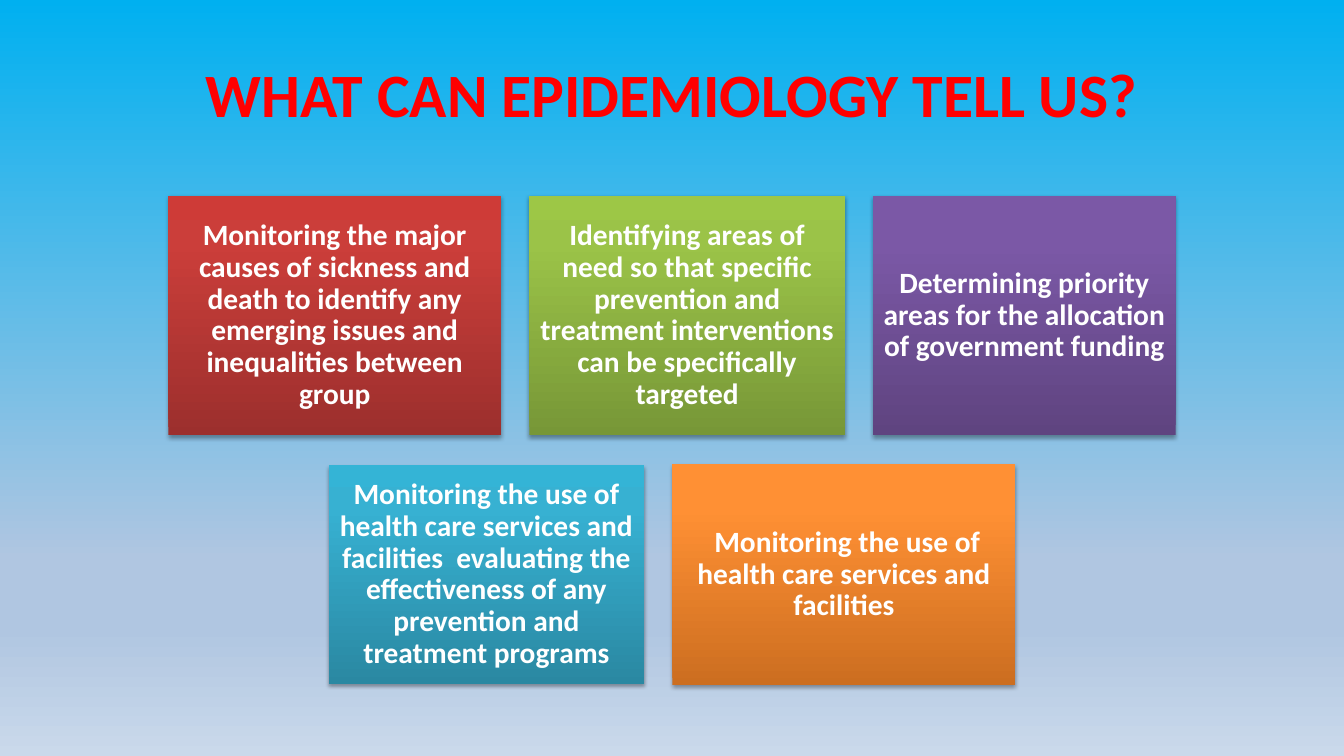
from lxml.etree import SubElement
from pptx import Presentation
from pptx.dml.color import RGBColor
from pptx.enum.shapes import MSO_SHAPE as SHAPE
from pptx.enum.text import MSO_ANCHOR as ANCHOR, PP_ALIGN as ALIGN
from pptx.oxml.ns import qn
from pptx.util import Emu, Inches, Pt

FONT = "Calibri"
BLACK = RGBColor(0x00, 0x00, 0x00)
WHITE = RGBColor(0xFF, 0xFF, 0xFF)
RED = RGBColor(0xFF, 0x00, 0x00)
SKY = RGBColor(0x00, 0xB0, 0xF0)
HAZE = RGBColor(0xB0, 0xC6, 0xE1)
MIST = RGBColor(0xCA, 0xD9, 0xEB)

# Tile shades, from bottom to top
SHADE_STOPS = (0, 80, 100)
CRIMSON = (RGBColor(0x9C, 0x2F, 0x2D), RGBColor(0xCB, 0x3E, 0x3A), RGBColor(0xCE, 0x3B, 0x37))
GREEN = (RGBColor(0x77, 0x97, 0x37), RGBColor(0x9B, 0xC3, 0x48), RGBColor(0x9D, 0xC7, 0x46))
PURPLE = (RGBColor(0x5F, 0x44, 0x80), RGBColor(0x7B, 0x58, 0xA6), RGBColor(0x7C, 0x57, 0xA8))
TEAL = (RGBColor(0x2A, 0x88, 0xA2), RGBColor(0x37, 0xB1, 0xD2), RGBColor(0x34, 0xB4, 0xD6))
ORANGE = (RGBColor(0xCC, 0x6E, 0x20), RGBColor(0xFF, 0x90, 0x34), RGBColor(0xFF, 0x91, 0x36))

# Rows of tiles: vertical centre, then (width, height, shades, text)
GAP = Inches(0.28)
ROWS = [
    (3.13, [
        (3.3, 2.38, CRIMSON, "Monitoring the major causes of sickness and death to identify "
                             "any emerging issues and inequalities between group"),
        (3.13, 2.38, GREEN, "Identifying areas of need so that speciﬁc prevention and "
                            "treatment interventions can be speciﬁcally targeted"),
        (3, 2.38, PURPLE, "Determining priority areas for the allocation of government funding"),
    ]),
    (5.7, [
        (3.13, 2.17, TEAL, "Monitoring the use of health care services and facilities  "
                           "evaluating the eﬀectiveness of any prevention and treatment programs"),
        (3.4, 2.19, ORANGE, " Monitoring the use of health care services and facilities"),
    ]),
]


def add_color(parent, color, alpha=100):
    clr = SubElement(parent, qn("a:srgbClr"), val=str(color))
    if alpha < 100:
        SubElement(clr, qn("a:alpha"), val=str(alpha * 1000))


def set_gradient(fill, element, stops, angle):
    """Fill with (percent, colour) stops; the angle runs clockwise."""
    fill.gradient()
    grad = next(element.iter(qn("a:gradFill")))
    for child in list(grad):
        grad.remove(child)
    gs_list = SubElement(grad, qn("a:gsLst"))
    for percent, color in stops:
        add_color(SubElement(gs_list, qn("a:gs"), pos=str(percent * 1000)), color)
    SubElement(grad, qn("a:lin"), ang=str(angle * 60000), scaled="0")


def add_shadow(sp):
    sp.shadow.inherit = False
    effects = sp._element.spPr.find(qn("a:effectLst"))
    shadow = SubElement(effects, qn("a:outerShdw"), blurRad=str(Pt(3.1)), dist=str(Pt(1.8)),
                        dir=str(90 * 60000), rotWithShape="0")
    add_color(shadow, BLACK, 35)


def write_text(sp, text, size, color):
    tf = sp.text_frame
    tf.word_wrap = True
    tf.vertical_anchor = ANCHOR.MIDDLE
    p = tf.paragraphs[0]
    p.text = text
    p.alignment = ALIGN.CENTER
    font = p.runs[0].font
    font.name, font.size, font.bold = FONT, Pt(size), True
    font.color.rgb = color
    return tf


def add_title(prs, slide, text):
    margin = prs.slide_width // 20
    sp = slide.shapes.add_textbox(margin, prs.slide_height // 25,
                                  prs.slide_width - 2 * margin, prs.slide_height // 6)
    write_text(sp, text, 44, RED)


def add_tile(slide, left, top, width, height, shades, text):
    sp = slide.shapes.add_shape(SHAPE.RECTANGLE, left, top, width, height)
    set_gradient(sp.fill, sp._element.spPr, zip(SHADE_STOPS, shades), 270)
    sp.line.fill.background()
    add_shadow(sp)
    tf = write_text(sp, text, 21, WHITE)
    tf.margin_left = tf.margin_right = tf.margin_top = tf.margin_bottom = Inches(0.09)
    tf.paragraphs[0].line_spacing = 0.9


def add_row(prs, slide, center, tiles):
    """Centre a row of tiles across the slide with equal gaps."""
    total = sum(Inches(tile[0]) for tile in tiles) + GAP * (len(tiles) - 1)
    left = (prs.slide_width - total) // 2
    for width, height, shades, text in tiles:
        w, h = Inches(width), Inches(height)
        add_tile(slide, Emu(left), Inches(center) - h // 2, w, h, shades, text)
        left += w + GAP


def main():
    prs = Presentation()
    prs.slide_width, prs.slide_height = Inches(13.33), Inches(7.5)
    slide = prs.slides.add_slide(prs.slide_layouts[6])

    # Background
    sky = [(0, SKY), (74, HAZE), (83, HAZE), (100, MIST)]
    set_gradient(slide.background.fill, slide._element, sky, 90)

    # Title and tiles
    add_title(prs, slide, "WHAT CAN EPIDEMIOLOGY TELL US?")
    for center, tiles in ROWS:
        add_row(prs, slide, center, tiles)

    prs.save("out.pptx")


if __name__ == "__main__":
    main()
